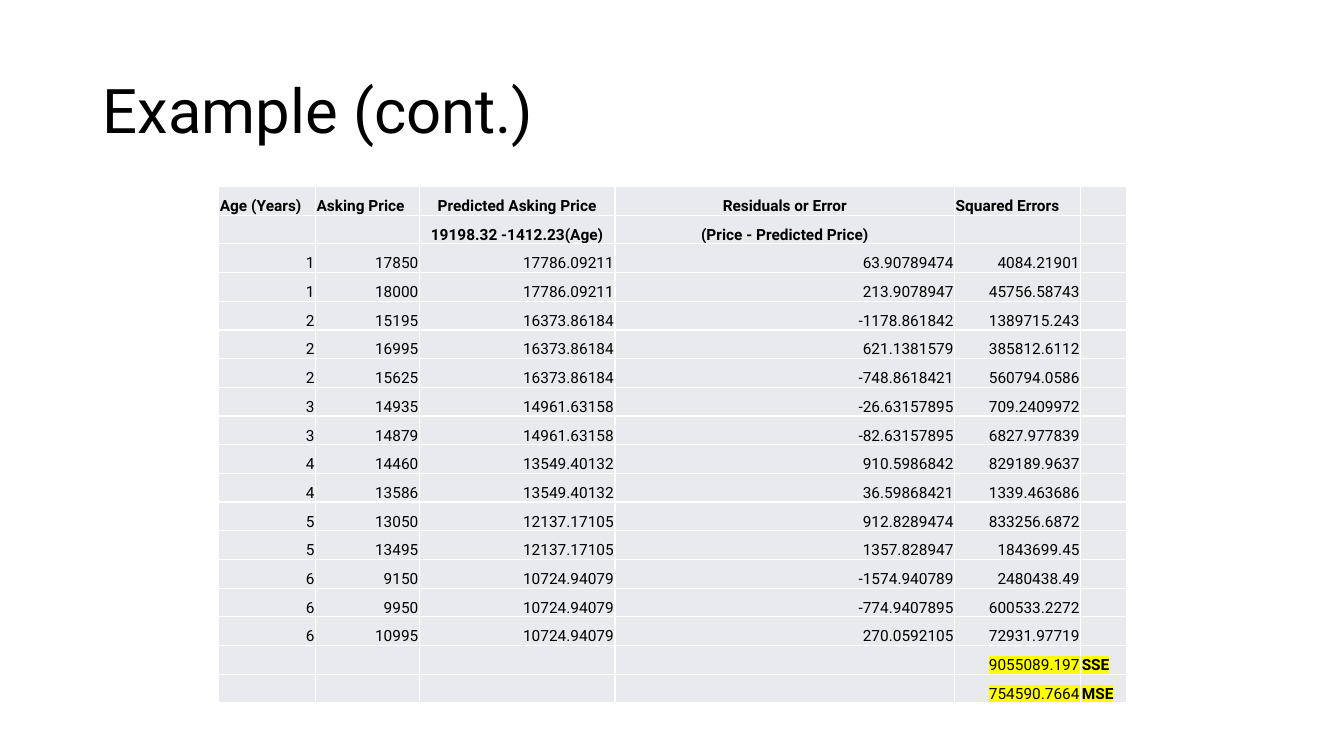
from lxml import etree
from pptx import Presentation
from pptx.dml.color import RGBColor
from pptx.enum.text import MSO_ANCHOR, PP_ALIGN
from pptx.oxml import parse_xml
from pptx.oxml.ns import nsdecls, qn
from pptx.util import Inches, Pt

LEFT, MID, RIGHT = PP_ALIGN.LEFT, PP_ALIGN.CENTER, PP_ALIGN.RIGHT
CENTER, BOTTOM = MSO_ANCHOR.MIDDLE, MSO_ANCHOR.BOTTOM

COLORS = {"text": "000000", "cell": "E8EAED", "rule": "FFFFFF", "mark": "FFFF00"}

WIDTHS = [0.96, 1.03, 1.94, 3.37, 1.25, 0.45]
HEADS = [
    ["Age (Years)", "Asking Price", "Predicted Asking Price",
     "Residuals or Error", "Squared Errors", ""],
    ["", "", "19198.32 -1412.23(Age)", "(Price - Predicted Price)", "", ""],
]
FITS = {
    "1": "17786.09211", "2": "16373.86184", "3": "14961.63158",
    "4": "13549.40132", "5": "12137.17105", "6": "10724.94079",
}
CARS = [
    ("1", "17850", "63.90789474", "4084.21901"),
    ("1", "18000", "213.9078947", "45756.58743"),
    ("2", "15195", "-1178.861842", "1389715.243"),
    ("2", "16995", "621.1381579", "385812.6112"),
    ("2", "15625", "-748.8618421", "560794.0586"),
    ("3", "14935", "-26.63157895", "709.2409972"),
    ("3", "14879", "-82.63157895", "6827.977839"),
    ("4", "14460", "910.5986842", "829189.9637"),
    ("4", "13586", "36.59868421", "1339.463686"),
    ("5", "13050", "912.8289474", "833256.6872"),
    ("5", "13495", "1357.828947", "1843699.45"),
    ("6", "9150", "-1574.940789", "2480438.49"),
    ("6", "9950", "-774.9407895", "600533.2272"),
    ("6", "10995", "270.0592105", "72931.97719"),
]
SUMS = [("9055089.197", "SSE"), ("754590.7664", "MSE")]


class Deck:
    def __init__(self, font, colors):
        self.font, self.colors = font, colors
        self.prs = Presentation()
        self.prs.slide_width, self.prs.slide_height = Inches(13.33), Inches(7.5)
        self.slide = self.prs.slides.add_slide(self.prs.slide_layouts[6])

    def style(self, para, size, bold=False, align=LEFT):
        para.alignment = align
        for run in para.runs:
            run.font.name, run.font.size, run.font.bold = self.font, Pt(size), bold
            run.font.color.rgb = RGBColor.from_string(self.colors["text"])

    def title(self, text, left, top, width, height):
        box = self.slide.shapes.add_textbox(
            Inches(left), Inches(top), Inches(width), Inches(height))
        frame = box.text_frame
        frame.word_wrap, frame.vertical_anchor = True, CENTER
        frame.text = text
        frame.paragraphs[0].line_spacing = 0.9
        self.style(frame.paragraphs[0], 44)

    def table(self, rows, left, top, widths, height):
        """Add an empty, unbanded table and return it."""
        table = self.slide.shapes.add_table(
            rows, len(widths), Inches(left), Inches(top),
            Inches(sum(widths)), Inches(height)).table
        table.first_row = table.horz_banding = False
        for col, width in zip(table.columns, widths):
            col.width = Inches(width)
        for row in table.rows:
            row.height = Inches(height / rows)
        return table

    def cell(self, cell, text, size, bold, align):
        cell.fill.solid()
        cell.fill.fore_color.rgb = RGBColor.from_string(self.colors["cell"])
        cell.vertical_anchor = BOTTOM
        cell.margin_left = cell.margin_right = cell.margin_top = Inches(0.01)
        cell.margin_bottom = 0
        self.border(cell)
        para = cell.text_frame.paragraphs[0]
        para.text = text
        self.style(para, size, bold, align)
        if not text:
            # An empty cell needs its own text size, or the row grows
            etree.SubElement(para._p, qn("a:endParaRPr"), sz=str(size * 100))

    def border(self, cell):
        props = cell._tc.get_or_add_tcPr()
        for spot, side in enumerate("LRTB"):
            props.insert(spot, parse_xml(
                f'<a:ln{side} {nsdecls("a")} w="12700"><a:solidFill>'
                f'<a:srgbClr val="{self.colors["rule"]}"/>'
                f'</a:solidFill></a:ln{side}>'))

    def mark(self, cell):
        """Highlight the text of a cell."""
        for run in cell.text_frame.paragraphs[0].runs:
            fill = run._r.get_or_add_rPr().find(qn("a:solidFill"))
            fill.addnext(parse_xml(
                f'<a:highlight {nsdecls("a")}>'
                f'<a:srgbClr val="{self.colors["mark"]}"/></a:highlight>'))


def main():
    deck = Deck("Roboto", COLORS)
    deck.title("Example (cont.)", 0.92, 0.4, 11.5, 1.45)

    body = [[age, price, FITS[age], error, square, ""]
            for age, price, error, square in CARS]
    sums = [[""] * 4 + list(pair) for pair in SUMS]
    rows = HEADS + body + sums
    table = deck.table(len(rows), 2.17, 1.85, WIDTHS, 5.13)
    for r, row in enumerate(rows):
        for c, text in enumerate(row):
            head, label = r < len(HEADS), c == len(WIDTHS) - 1
            if head:
                align = MID if c in (2, 3) else LEFT
            else:
                align = LEFT if label else RIGHT
            cell = table.cell(r, c)
            deck.cell(cell, text, 11, head or label, align)
            if row in sums:
                deck.mark(cell)

    deck.prs.save("out.pptx")


if __name__ == "__main__":
    main()
